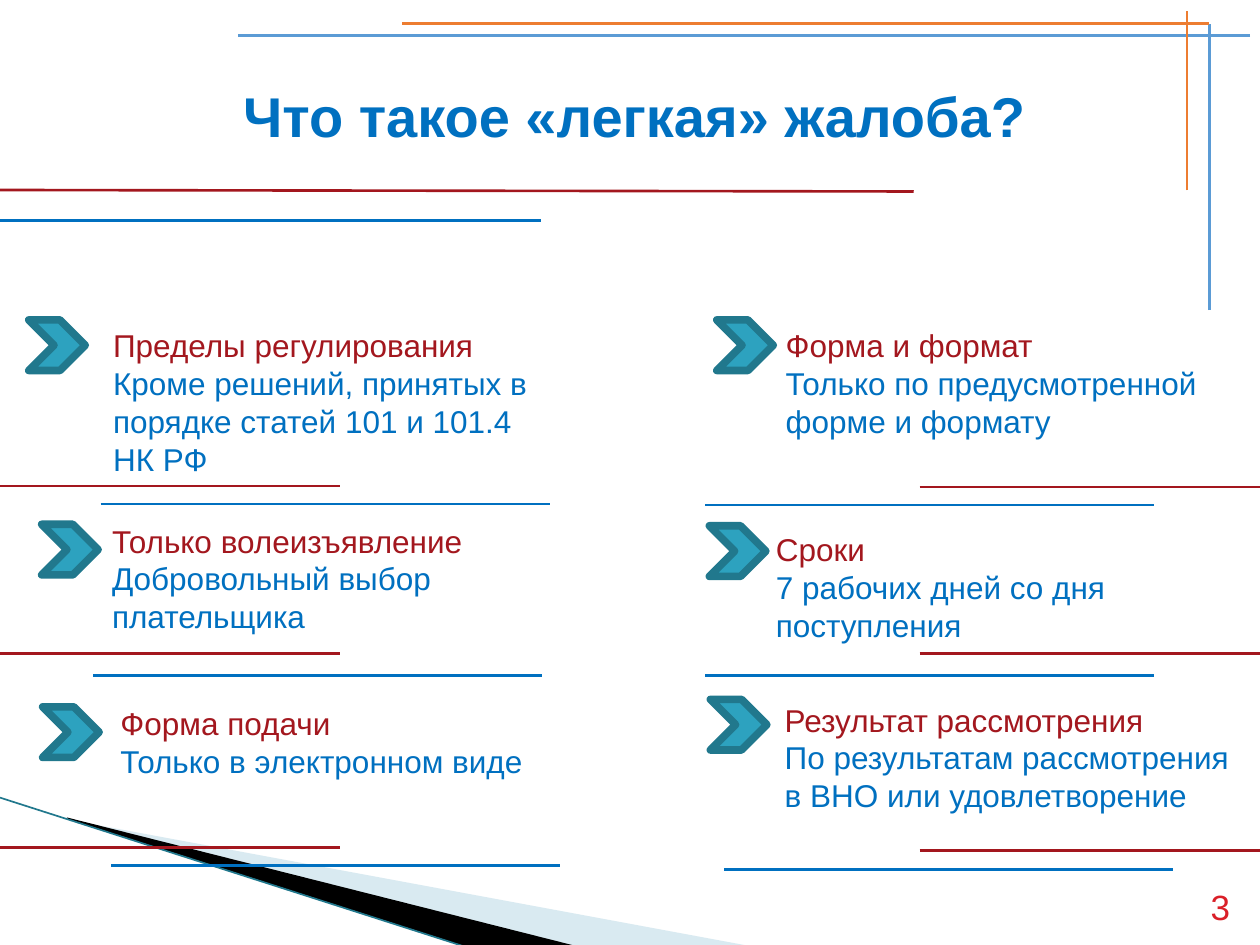
import pptx
import pptx.util
import pptx.dml.color
import pptx.enum.shapes
import pptx.enum.text
import pptx.oxml
import pptx.oxml.ns
from lxml import etree

Cm = pptx.util.Cm
Pt = pptx.util.Pt
RGBColor = pptx.dml.color.RGBColor
MSO_SHAPE = pptx.enum.shapes.MSO_SHAPE
MSO_CONNECTOR = pptx.enum.shapes.MSO_CONNECTOR
PP_ALIGN = pptx.enum.text.PP_ALIGN
MSO_ANCHOR = pptx.enum.text.MSO_ANCHOR
MSO_AUTO_SIZE = pptx.enum.text.MSO_AUTO_SIZE
qn = pptx.oxml.ns.qn

BLUE = RGBColor(0x00, 0x70, 0xC0)
DARK_RED = RGBColor(0xA3, 0x17, 0x1E)
NUMBER_RED = RGBColor(0xDA, 0x1F, 0x28)
TEAL = RGBColor(0x2D, 0xA2, 0xBF)
DARK_TEAL = RGBColor(0x21, 0x78, 0x8D)
PALE_TEAL = RGBColor(0xA0, 0xCB, 0xDC)
EDGE_TEAL = RGBColor(0x97, 0xC5, 0xD8)
BLACK = RGBColor(0, 0, 0)
CORNER_BLUE = RGBColor(0x5B, 0x9B, 0xD5)
ORANGE = RGBColor(0xED, 0x7D, 0x31)

RULE_W = 9.05
RED_W = 6.86
COLUMNS = [
    (0, 0, [
        (6.45, 3.33, (0.58, 0), (2.03, 9.12), 3.35, (2.03, 3.71),
         "Пределы регулирования",
         "Кроме решений, принятых в порядке статей 101 и 101.4 НК РФ"),
        (10.39, 2.57, (0.84, 0.18), (2.01, 9.42), 2.79, (1.88, 3.23),
         "Только волеизъявление", "Добровольный выбор плательщика"),
        (14.07, 1.8, (0.86, 0.18), (2.18, 9.35), 3.01, (2.24, 3.38),
         "Форма подачи", "Только в электронном виде"),
    ]),
    (14.22, 4.32, [
        (6.45, 2.57, (0.23, 0), (1.37, 9.04), 3.37, (0, 3.73),
         "Форма и формат", "Только по предусмотренной форме и формату"),
        (10.57, 2.57, (0.08, 0.03), (1.17, 9.27), 2.6, (0, 3.05),
         "Сроки", "7 рабочих дней со дня поступления"),
        (14.0, 2.57, (0.1, 0.1), (1.35, 9.83), 3.15, (0.38, 3.53),
         "Результат рассмотрения",
         "По результатам рассмотрения в ВНО или удовлетворение"),
    ]),
]


def add_line(s, x1, y1, x2, y2, color, width=1.5):
    c = s.shapes.add_connector(
        MSO_CONNECTOR.STRAIGHT, Cm(x1), Cm(y1), Cm(x2), Cm(y2))
    c.line.color.rgb = color
    c.line.width = Pt(width)
    etree.SubElement(c._element.spPr, qn("a:effectLst"))


def add_run(p, text, size, color, bold=False):
    r = p.add_run()
    r.text = text
    r.font.name = "Arial"
    r.font.size = Pt(size)
    r.font.bold = bold
    r.font.color.rgb = color


def add_wedge(s, x, y, points, color, alpha=None):
    start, *rest = [(Cm(x + dx), Cm(y + dy)) for dx, dy in points]
    fb = s.shapes.build_freeform(*start)
    fb.add_line_segments(rest)
    sp = fb.convert_to_shape()
    sp.shadow.inherit = False
    sp.fill.solid()
    sp.fill.fore_color.rgb = color
    sp.line.fill.background()
    if alpha:
        clr = sp._element.spPr.find(".//" + qn("a:srgbClr"))
        etree.SubElement(clr, qn("a:alpha"), val=str(alpha * 1000))


def add_swoosh(s, x, y):
    add_wedge(s, x, y, [(1.4, 0.45), (15.11, 2.99), (11.58, 2.99), (1.4, 0.43)],
              PALE_TEAL, 40)
    add_wedge(s, x, y, [(1.35, 0.4), (11.61, 2.99), (9.45, 3.02), (1.37, 0.43)],
              BLACK)
    add_line(s, x, y, x + 9.42, y + 3.02, DARK_TEAL, 0.95)


def add_header(s, x, y, w, h):
    tf = s.shapes.add_textbox(Cm(x), Cm(y), Cm(w), Cm(h)).text_frame
    tf.word_wrap = False
    tf.auto_size = MSO_AUTO_SIZE.SHAPE_TO_FIT_TEXT
    add_run(tf.paragraphs[0], "Что такое «легкая» жалоба?", 32, BLUE, True)
    add_line(s, 0, y + 2.92, 10.9, y + 2.92, BLUE)
    add_line(s, 0, y + 2.31, 18.42, y + 2.34, DARK_RED)


def add_item(s, x, y, h, chevron, text, red, rule, heading, body):
    text_x, text_w = text
    tf = s.shapes.add_textbox(
        Cm(x + text_x), Cm(y), Cm(text_w), Cm(h)).text_frame
    tf.word_wrap = True
    tf.auto_size = MSO_AUTO_SIZE.SHAPE_TO_FIT_TEXT
    add_run(tf.paragraphs[0], heading, 18, DARK_RED)
    add_run(tf.add_paragraph(), body, 18, BLUE)

    chevron_x, chevron_y = chevron
    sp = s.shapes.add_shape(MSO_SHAPE.CHEVRON, Cm(x + chevron_x),
                            Cm(y + chevron_y), Cm(1.14), Cm(1.02))
    sp.shadow.inherit = False
    sp.fill.solid()
    sp.fill.fore_color.rgb = TEAL
    sp.line.color.rgb = DARK_TEAL
    sp.line.width = Pt(4.33)
    etree.SubElement(sp._element.spPr.find(qn("a:ln")), qn("a:round"))

    red_x, red_y = red
    add_line(s, x + red_x, y + red_y, x + red_x + RED_W, y + red_y, DARK_RED)
    rule_x, rule_y = rule
    add_line(s, x + rule_x, y + rule_y, x + rule_x + RULE_W, y + rule_y, BLUE)


def add_column(s, x, red_x, items):
    for y, h, chevron, text, red_y, rule, heading, body in items:
        add_item(s, x, y, h, chevron, text, (red_x, red_y), rule, heading, body)


def add_page_number(s, x, y, size):
    tf = s.shapes.add_textbox(Cm(x), Cm(y), Cm(size), Cm(size)).text_frame
    tf.word_wrap = True
    tf.vertical_anchor = MSO_ANCHOR.BOTTOM
    p = tf.paragraphs[0]
    p.alignment = PP_ALIGN.RIGHT
    add_run(p, "3", 20, NUMBER_RED)


def add_corner(s, x, y, w, h):
    add_line(s, x + w - 0.82, y + h, x + w - 0.82, y + 0.25, CORNER_BLUE)
    add_line(s, x + w, y + 0.48, x, y + 0.48, CORNER_BLUE)
    add_line(s, x + w - 1.27, y + 3.61, x + w - 1.27, y, ORANGE)
    add_line(s, x + w - 0.82, y + 0.25, x + 3.3, y + 0.25, ORANGE)


def main():
    prs = pptx.Presentation()
    prs.slide_width = Cm(25.4)
    prs.slide_height = Cm(19.05)
    s = prs.slides.add_slide(prs.slide_layouts[6])
    add_swoosh(s, 0, 16.08)
    add_header(s, 4.65, 1.52, 16.41, 1.63)
    for x, red_x, items in COLUMNS:
        add_column(s, x, red_x, items)
    add_page_number(s, 24.03, 17.81, 1.02)
    add_corner(s, 4.8, 0.23, 20.4, 6.02)
    prs.save("out.pptx")


if __name__ == "__main__":
    main()
